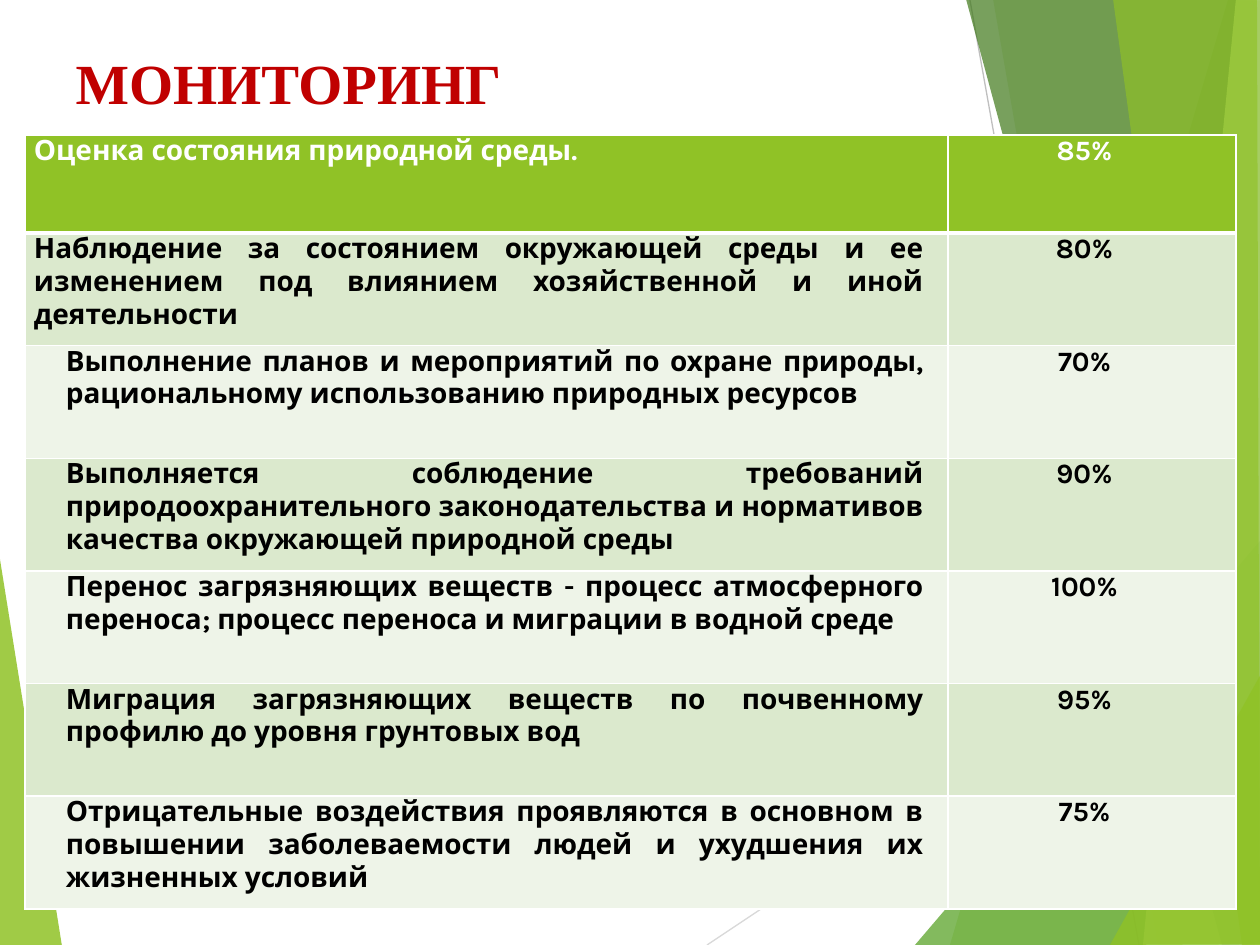
from lxml.etree import SubElement
from pptx import Presentation
from pptx.dml.color import RGBColor
from pptx.enum.shapes import MSO_CONNECTOR
from pptx.enum.text import MSO_ANCHOR, MSO_AUTO_SIZE, PP_ALIGN
from pptx.oxml.ns import qn
from pptx.util import Pt

# Content
TITLE = "МОНИТОРИНГ"
ROWS = [
    ("Оценка состояния природной среды.", "85%"),
    ("Наблюдение за состоянием окружающей среды и ее изменением под влиянием "
     "хозяйственной и иной деятельности", "80%"),
    ("Выполнение планов и мероприятий по охране природы, рациональному "
     "использованию природных ресурсов", "70%"),
    ("Выполняется соблюдение требований природоохранительного "
     "законодательства и нормативов качества окружающей природной среды", "90%"),
    ("Перенос загрязняющих веществ - процесс атмосферного переноса; "
     "процесс переноса и миграции в водной среде", "100%"),
    ("Миграция загрязняющих веществ по почвенному профилю до уровня "
     "грунтовых вод", "95%"),
    ("Отрицательные воздействия проявляются в основном в повышении "
     "заболеваемости людей и ухудшения их жизненных условий", "75%"),
]

HEX = {
    "lime": "90C226", "green": "54A021", "dark": "3F7819", "pale": "C0E474",
    "band": "DBE9CD", "light": "EEF4E8", "white": "FFFFFF", "black": "000000",
    "red": "C00000", "gray": "D9D9D9", "steel": "BFBFBF",
}

# Backdrop, back to front: colour, opacity in percent, corners in px
LEAF = ("lime", 85, [(-1, 553), (62, 946), (-1, 945)])
RAYS = [("gray", (707, 945), (1261, 576)), ("steel", (970, 0), (1139, 945))]
BLADES = [
    ("lime", 30, [(1228, 0), (950, 945), (1262, 946), (1261, 1)]),
    ("lime", 20, [(993, -1), (1158, 945), (1261, 945), (1261, -1)]),
    ("green", 72, [(915, 945), (1260, 541), (1261, 945)]),
    ("dark", 70, [(966, -1), (1222, 945), (1261, 944), (1261, -1)]),
    ("pale", 70, [(1236, -1), (1143, 945), (1261, 945), (1260, -1)]),
    ("lime", 65, [(1113, -1), (1242, 945), (1260, 945), (1257, -1)]),
    ("lime", 80, [(1110, 945), (1261, 674), (1261, 944)]),
]

# Layout in px
SCALE = 914400 / 126
WIDE, HIGH = 1260, 945
LEFT, TOP, TALL = 25, 135, 774
COLS = (923, 288)
HEAD = 98
INDENT = 32
FONT = "Karla"


def px(n):
    return round(n * SCALE)


def rgb(name):
    return RGBColor.from_string(HEX[name])


def write(frame, text, size=16, font=FONT, color="black", align=None,
          gap=0, indent=0):
    par = frame.paragraphs[0]
    par.alignment = align
    if gap:
        par.space_before = par.space_after = Pt(gap)
    if indent:
        props = par._p.get_or_add_pPr()
        props.set("marL", str(px(indent)))
        props.set("indent", "0")
    run = par.add_run()
    run.text = text
    run.font.size, run.font.name, run.font.bold = Pt(size), font, True
    run.font.color.rgb = rgb(color)


def blade(shapes, color, alpha, dots):
    path = shapes.build_freeform(*dots[0], scale=SCALE)
    path.add_line_segments(dots[1:], close=True)
    shape = path.convert_to_shape()
    shape.shadow.inherit = False
    shape.line.fill.background()
    shape.fill.solid()
    shape.fill.fore_color.rgb = rgb(color)
    tint = shape._element.spPr.find(qn("a:solidFill"))[0]
    SubElement(tint, qn("a:alpha")).set("val", str(alpha * 1000))


def ray(shapes, color, start, end):
    line = shapes.add_connector(MSO_CONNECTOR.STRAIGHT, *map(px, start + end))
    line.line.color.rgb = rgb(color)
    line.line.width = Pt(0.75)
    SubElement(line._element.spPr, qn("a:effectLst"))


def edge(cell, side, width):
    line = SubElement(cell._tc.get_or_add_tcPr(), qn("a:ln" + side))
    line.set("w", str(Pt(width)))
    fill = SubElement(line, qn("a:solidFill"))
    SubElement(fill, qn("a:srgbClr")).set("val", HEX["white"])


def main():
    deck = Presentation()
    deck.slide_width, deck.slide_height = px(WIDE), px(HIGH)
    slide = deck.slides.add_slide(deck.slide_layouts[5])
    shapes = slide.shapes

    # Backdrop
    blade(shapes, *LEAF)
    for item in RAYS:
        ray(shapes, *item)
    for item in BLADES:
        blade(shapes, *item)

    # Title, in front of the backdrop
    title = shapes.title
    title.left, title.top, title.width, title.height = map(
        px, (63, 38, 1134, 87))
    frame = title.text_frame
    frame.auto_size = MSO_AUTO_SIZE.NONE
    frame.vertical_anchor = MSO_ANCHOR.MIDDLE
    write(frame, TITLE, size=32.4, font="Times New Roman", color="red",
          align=PP_ALIGN.LEFT)
    shapes._spTree.append(title._element)

    # Table
    table = shapes.add_table(len(ROWS), len(COLS), px(LEFT), px(TOP),
                             px(sum(COLS)), px(TALL)).table
    table.first_row = table.horz_banding = False
    for col, width in zip(table.columns, COLS):
        col.width = px(width)
    body = (TALL - HEAD) / (len(ROWS) - 1)
    for r, texts in enumerate(ROWS):
        table.rows[r].height = px(body if r else HEAD)
        back = ("light", "band")[r % 2] if r else "lime"
        for c, text in enumerate(texts):
            cell = table.cell(r, c)
            cell.margin_left, cell.margin_right = px(9), px(24)
            cell.margin_top = cell.margin_bottom = 0
            for side in "LRTB":
                thick = (r, side) in ((0, "B"), (1, "T"))
                edge(cell, side, 3 if thick else 1)
            cell.fill.solid()
            cell.fill.fore_color.rgb = rgb(back)
            plain = PP_ALIGN.JUSTIFY if r else PP_ALIGN.LEFT
            write(cell.text_frame, text,
                  color="black" if r else "white",
                  align=PP_ALIGN.CENTER if c else plain,
                  gap=7.8 if r or c else 0,
                  indent=INDENT if r > 1 and c == 0 else 0)

    deck.save("out.pptx")


if __name__ == "__main__":
    main()
